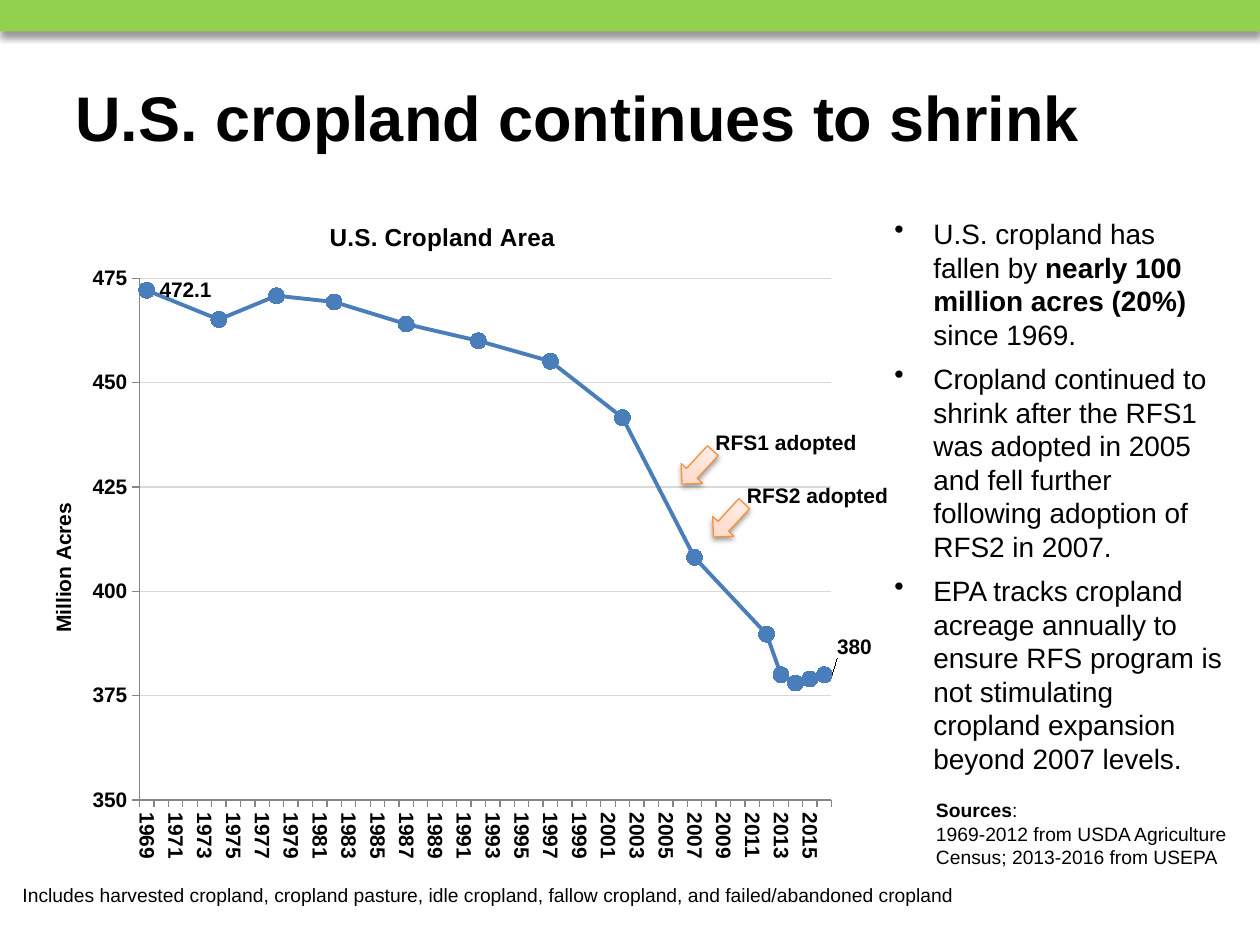
from lxml import etree
from pptx import Presentation
from pptx.chart.data import CategoryChartData
from pptx.dml.color import RGBColor
from pptx.enum.chart import XL_CHART_TYPE as ChartType, XL_LABEL_POSITION as LabelPosition
from pptx.enum.chart import XL_MARKER_STYLE as MarkerStyle, XL_TICK_MARK as TickMark
from pptx.enum.shapes import MSO_SHAPE as ShapeType
from pptx.enum.text import MSO_ANCHOR as Anchor, MSO_AUTO_SIZE as AutoSize
from pptx.oxml import parse_xml
from pptx.oxml.ns import nsdecls, qn
from pptx.util import Inches, Pt

FONT = "Arial"
BLACK = "000000"
SERIES_BLUE = "4A7EBB"
ACRES = {
    1969: 472.1, 1974: 465.1, 1978: 470.8, 1982: 469.3, 1987: 464,
    1992: 460, 1997: 455.1, 2002: 441.6, 2007: 408.1, 2012: 389.7,
    2013: 380, 2014: 378, 2015: 379, 2016: 380,
}
YEARS = range(1969, 2017)


def color(value):
    """Turn a hex string into a colour."""
    return RGBColor.from_string(value)


def set_font(font, size, bold=False):
    """Apply the slide's typeface at a given size and weight."""
    font.name, font.size, font.bold = FONT, Pt(size), bold
    font.color.rgb = color(BLACK)


def add_text(slide, box, paragraphs, size=12, bold=False, bullet=False,
             space_before=0, anchor=Anchor.TOP, grow=True):
    """Add a text box; each paragraph is a list of (text, bold) runs or a string."""
    shape = slide.shapes.add_textbox(*map(Inches, box))
    frame = shape.text_frame
    frame.word_wrap = True
    frame.vertical_anchor = anchor
    frame.auto_size = AutoSize.SHAPE_TO_FIT_TEXT if grow else AutoSize.NONE
    for index, content in enumerate(paragraphs):
        paragraph = frame.add_paragraph() if index else frame.paragraphs[0]
        if index and space_before:
            paragraph.space_before = Pt(space_before)
        if bullet:
            properties = paragraph._p.get_or_add_pPr()
            properties.set("marL", str(Inches(0.31)))
            properties.set("indent", str(Inches(-0.31)))
            etree.SubElement(properties, qn("a:buChar"), char="•")
        runs = [(content, bold)] if isinstance(content, str) else content
        for text, run_bold in runs:
            run = paragraph.add_run()
            run.text = text
            set_font(run.font, size, run_bold)
    return shape


def add_shadow(shape, alpha, blur, distance):
    """Give a shape a soft black shadow that falls downwards."""
    shape.shadow.inherit = False
    effects = shape._element.spPr.find(qn("a:effectLst"))
    effects.append(parse_xml(
        f'<a:outerShdw {nsdecls("a")} blurRad="{Pt(blur)}" dist="{Pt(distance)}" '
        f'dir="5400000" rotWithShape="0"><a:srgbClr val="{BLACK}">'
        f'<a:alpha val="{alpha * 1000}"/></a:srgbClr></a:outerShdw>'))


def add_header_band(slide, box):
    """Draw the green band across the top."""
    band = slide.shapes.add_shape(ShapeType.RECTANGLE, *map(Inches, box))
    band.fill.solid()
    band.fill.fore_color.rgb = color("92D050")
    band.line.fill.background()
    add_shadow(band, 40, 4, 3)


def add_callout(slide, box, text):
    """Place a slanted arrow and its label within a box."""
    left, top, width, height = box
    arrow = slide.shapes.add_shape(
        ShapeType.DOWN_ARROW, Inches(left), Inches(top + 0.17), Inches(0.23), Inches(0.36))
    arrow.rotation = 42.6
    arrow.fill.gradient()
    gradient = arrow._element.spPr.find(qn("a:gradFill"))
    stops = gradient.find(qn("a:gsLst"))
    for stop in list(stops):
        stops.remove(stop)
    for position, value in ((0, "FFD2BD"), (35, "FFDED0"), (100, "FFF2ED")):
        stop = etree.SubElement(stops, qn("a:gs"), pos=str(position * 1000))
        etree.SubElement(stop, qn("a:srgbClr"), val=value)
    gradient.find(qn("a:lin")).set("ang", "16200000")
    arrow.line.color.rgb = color("F69240")
    arrow.line.width = Pt(0.75)
    add_shadow(arrow, 38, 3.1, 1.6)
    add_text(slide, (left + 0.16, top, width - 0.16, height), [text], bold=True)


def manual_layout(x, y, width=None, height=None):
    """Build a chart layout from fractions of the chart."""
    layout = etree.Element(qn("c:layout"))
    manual = etree.SubElement(layout, qn("c:manualLayout"))
    if width:
        etree.SubElement(manual, qn("c:layoutTarget"), val="inner")
    if width is not None or x > 0:
        for name in ("xMode", "yMode"):
            etree.SubElement(manual, qn(f"c:{name}"), val="edge")
    for name, value in (("x", x), ("y", y), ("w", width), ("h", height)):
        if value is not None:
            etree.SubElement(manual, qn(f"c:{name}"), val=str(value))
    return layout


def set_title(owner, text, size, x, y):
    """Title a chart or an axis at a fixed place."""
    frame = (owner.chart_title if hasattr(owner, "chart_title") else owner.axis_title).text_frame
    frame.text = text
    set_font(frame.paragraphs[0].runs[0].font, size, True)
    title = frame._txBody.getparent().getparent()
    for layout in title.findall(qn("c:layout")):
        title.remove(layout)
    title.find(qn("c:tx")).addnext(manual_layout(x, y))


def format_axes(chart):
    """Set the scale, ticks, gridlines and labels of both axes."""
    values, categories = chart.value_axis, chart.category_axis
    values.minimum_scale, values.maximum_scale, values.major_unit = 350, 475, 25
    values.major_gridlines.format.line.color.rgb = color("D9D9D9")
    values.major_gridlines.format.line.width = Pt(0.75)
    values.tick_labels.number_format = "0"
    values.tick_labels.number_format_is_linked = False
    for axis in (values, categories):
        axis.major_tick_mark = TickMark.OUTSIDE
        axis.minor_tick_mark = TickMark.NONE
        axis.format.line.color.rgb = color("868686")
        set_font(axis.tick_labels.font, 12, True)
    categories._element.find(qn("c:txPr")).find(qn("a:bodyPr")).set("rot", "5400000")
    no_multi_level = categories._element.find(qn("c:noMultiLvlLbl"))
    for name, step in (("tickLblSkip", "2"), ("tickMarkSkip", "1")):
        no_multi_level.addprevious(etree.Element(qn(f"c:{name}"), val=step))


def add_cropland_chart(slide, box):
    """Plot cropland by year, joining the years that have data."""
    data = CategoryChartData()
    data.categories = [str(year) for year in YEARS]
    data.add_series("Series 1", [ACRES.get(year) for year in YEARS])
    chart = slide.shapes.add_chart(ChartType.LINE_MARKERS, *map(Inches, box), data).chart
    chart.has_legend = False
    set_font(chart.font, 12, True)
    set_title(chart, "U.S. Cropland Area", 14, 0.36, 0.04)
    set_title(chart.value_axis, "Million Acres", 12, 0.03, 0.45)
    format_axes(chart)
    chart.plots[0].vary_by_categories = False

    series = chart.plots[0].series[0]
    series.smooth = False
    series.format.line.color.rgb = color(SERIES_BLUE)
    series.format.line.width = Pt(2.25)
    series.marker.style, series.marker.size = MarkerStyle.CIRCLE, 9
    series.marker.format.fill.solid()
    series.marker.format.fill.fore_color.rgb = color(SERIES_BLUE)
    series.marker.format.line.color.rgb = color(SERIES_BLUE)
    series.data_labels.show_value = False
    last = len(YEARS) - 1
    for index in (0, last):
        label = series.points[index].data_label
        set_font(label.font, 12, True)
        label.position = LabelPosition.RIGHT
    label_element = series.data_labels._element.findall(qn("c:dLbl"))[-1]
    label_element.find(qn("c:idx")).addnext(manual_layout(0, -0.04))

    plot_area = chart._chartSpace.chart.plotArea
    for layout in plot_area.findall(qn("c:layout")):
        plot_area.remove(layout)
    plot_area.insert(0, manual_layout(0.14, 0.13, 0.82, 0.76))
    chart._chartSpace.chart.find(qn("c:dispBlanksAs")).set("val", "span")


def add_findings(slide, box):
    """List the findings beside the chart."""
    add_text(slide, box, [
        [("U.S. cropland has fallen by ", False),
         ("nearly 100 million acres (20%) ", True), ("since 1969.", False)],
        "Cropland continued to shrink after the RFS1 was adopted in 2005 and fell further "
        "following adoption of RFS2 in 2007.",
        "EPA tracks cropland acreage annually to ensure RFS program is not stimulating "
        "cropland expansion beyond 2007 levels.",
    ], size=16, bullet=True, space_before=6)


def main():
    """Build the slide and save it."""
    presentation = Presentation()
    presentation.slide_width, presentation.slide_height = Inches(10), Inches(7.5)
    slide = presentation.slides.add_slide(presentation.slide_layouts[6])
    add_header_band(slide, (0, 0, 10, 0.25))
    add_cropland_chart(slide, (0.17, 1.5, 6.75, 5.45))
    add_text(slide, (0.5, 0.3, 9, 1.25), ["U.S. cropland continues to shrink"],
             size=36, bold=True, anchor=Anchor.MIDDLE, grow=False)
    add_callout(slide, (5.42, 3.36, 2.08, 0.3), "RFS1 adopted")
    add_callout(slide, (5.67, 3.78, 2.08, 0.3), "RFS2 adopted")
    add_text(slide, (7.33, 6.29, 2.75, 0.66), [
        [("Sources", True), (":", False)],
        "1969-2012 from USDA Agriculture Census; 2013-2016 from USEPA"], size=11)
    add_text(slide, (0.08, 6.96, 7.92, 0.29), [
        "Includes harvested cropland, cropland pasture, idle cropland, fallow cropland, "
        "and failed/abandoned cropland"], size=11)
    add_findings(slide, (7, 1.67, 2.83, 4.58))
    presentation.save("out.pptx")


if __name__ == "__main__":
    main()
